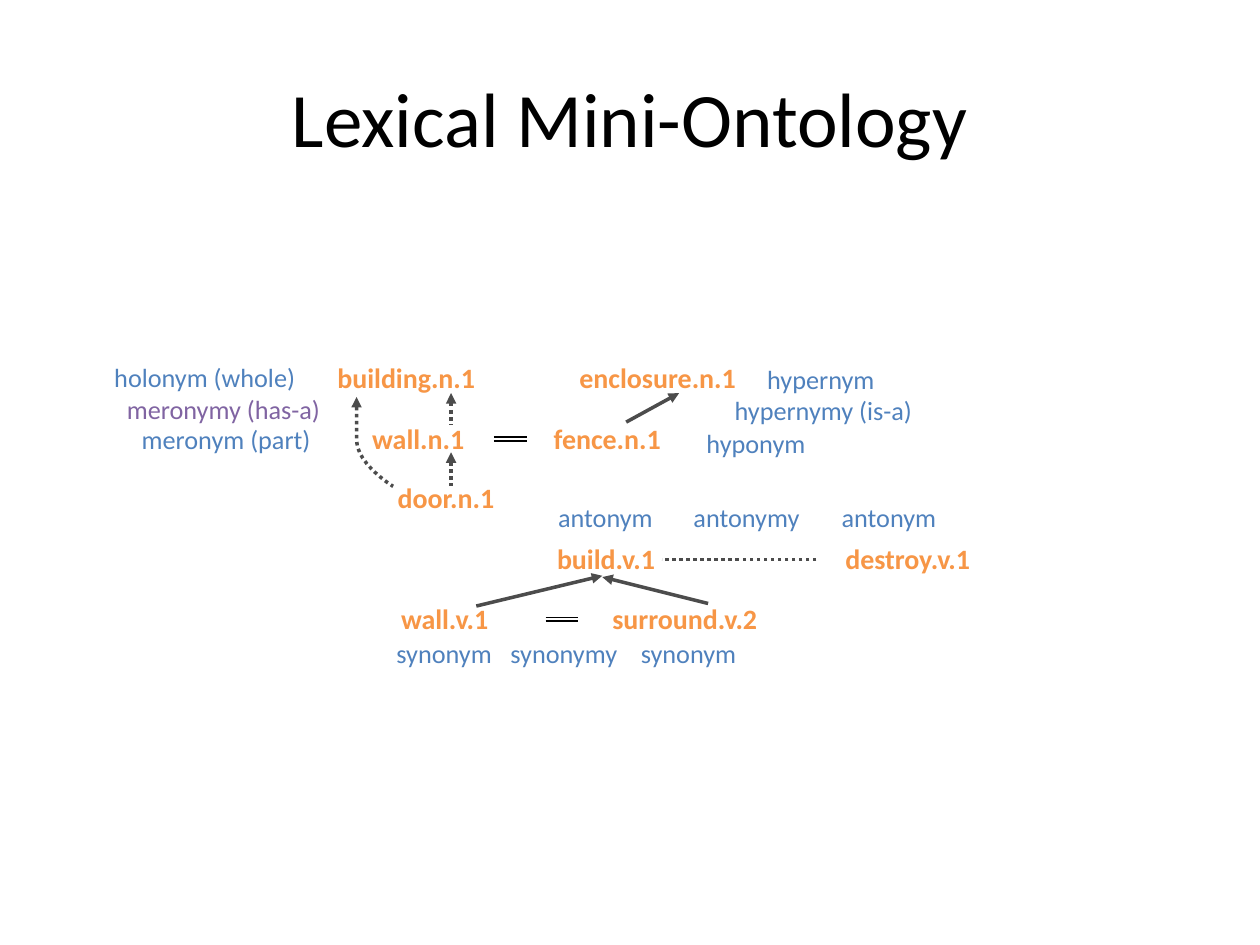
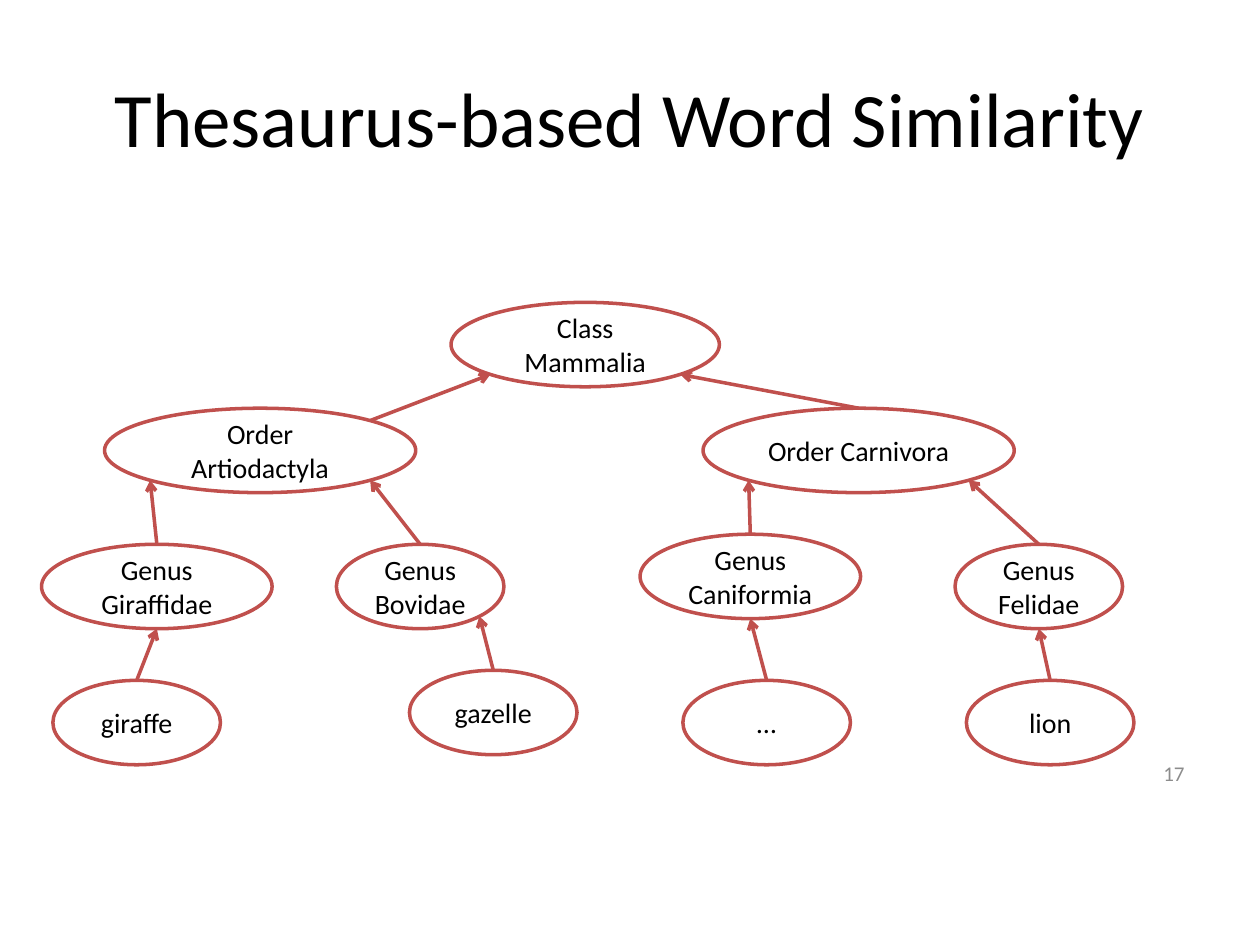
from typing import NamedTuple

from lxml.etree import SubElement
from pptx import Presentation
from pptx.dml.color import RGBColor
from pptx.enum.dml import MSO_LINE_DASH_STYLE as Dash
from pptx.enum.shapes import MSO_CONNECTOR as Conn, MSO_SHAPE as Shp
from pptx.enum.text import MSO_ANCHOR as Anchor, PP_ALIGN as Align
from pptx.oxml.ns import qn
from pptx.util import Inches, Pt

FONT = "Calibri"
BLACK, WHITE, GREY = "000000", "FFFFFF", "8C8C8C"
ORANGE, BLUE, PURPLE = "F79646", "4F81BD", "8064A2"
ARROW_GREY, RED = "4C4C4C", "C0504D"

Point = tuple[float, float]


class Label(NamedTuple):
    text: str
    left: float
    top: float
    width: float
    height: float = 0.25
    color: str = BLUE


class Relation(NamedTuple):
    """A line whose arrowhead, if any, sits at the head point."""
    head: Point
    tail: Point
    arrow: str | None = "triangle"
    dotted: bool = False


class Node(NamedTuple):
    text: str
    left: float
    top: float
    width: float = 1.33


class Link(NamedTuple):
    child: str
    parent: str
    parent_site: int
    child_site: int = 0


# Connection sites of an ellipse, as offsets in half widths and half heights
DIAG = 0.707
SITES = [(0, -1), (-DIAG, -DIAG), (-1, 0), (-DIAG, DIAG),
         (0, 1), (DIAG, DIAG), (1, 0), (DIAG, -DIAG)]
BOTTOM_LEFT, BOTTOM, BOTTOM_RIGHT, TOP_RIGHT = 3, 4, 5, 7

TERM_H, TALL_H = 0.27, 0.36
TERMS = [
    Label("building.n.1", 2.67, 2.86, 1.11, TERM_H),
    Label("enclosure.n.1", 4.59, 2.86, 1.26, TERM_H),
    Label("wall.n.1", 2.95, 3.34, 0.74, TERM_H),
    Label("fence.n.1", 4.39, 3.34, 0.86, TERM_H),
    Label("door.n.1", 2.82, 3.77, 1.44, TALL_H),
    Label("build.v.1", 4.09, 4.25, 1.44, TALL_H),
    Label("destroy.v.1", 6.35, 4.25, 1.71, TALL_H),
    Label("wall.v.1", 3.18, 4.77, 0.70, TERM_H),
    Label("surround.v.2", 4.39, 4.73, 2.09, TALL_H),
]
ANTONYM_Y, SYNONYM_Y = 3.98, 5.06
ROLES = [
    Label("holonym (whole)", 0.90, 2.87, 1.45),
    Label("meronymy (has-a)", 0.36, 3.06, 2.83, 0.37, PURPLE),
    Label("meronym (part)", 0.94, 3.30, 1.71, 0.37),
    Label("hypernym", 6.08, 2.88, 0.87),
    Label("hypernymy (is-a)", 5.82, 3.13, 1.43),
    Label("hyponym", 5.60, 3.39, 0.80),
    Label("antonym", 4.42, ANTONYM_Y, 0.77),
    Label("antonymy", 5.49, ANTONYM_Y, 0.87),
    Label("antonym", 6.67, ANTONYM_Y, 0.77),
    Label("synonym", 3.14, SYNONYM_Y, 0.77),
    Label("synonymy", 4.04, SYNONYM_Y, 0.87),
    Label("synonym", 5.08, SYNONYM_Y, 0.77),
]
RELATIONS = [
    Relation((3.58, 3.12), (3.58, 3.37), dotted=True),
    Relation((3.58, 3.59), (3.58, 3.86), dotted=True),
    Relation((5.39, 3.12), (4.97, 3.35)),
    Relation((4.78, 4.57), (3.78, 4.81)),
    Relation((4.78, 4.58), (5.62, 4.79)),
    Relation((6.48, 4.44), (5.25, 4.44), arrow=None, dotted=True),
]
DOOR_TO_BUILDING = [
    [(2.83, 3.15), (2.83, 3.15), (2.83, 3.43), (2.83, 3.50)],
    [(2.83, 3.50), (2.84, 3.69), (3.12, 3.86), (3.12, 3.86)],
]
EQUAL_SIGNS = [(3.92, 3.47), (4.33, 4.90)]
EQUAL_W, EQUAL_GAP = 0.26, 0.03

NODE_H = 0.67
ORDER_Y, GENUS_Y, ANIMAL_Y = 3.24, 4.32, 5.40
NODES = [
    Node("Class Mammalia", 3.58, 2.40, 2.13),
    Node("Order Artiodactyla", 0.83, ORDER_Y, 2.47),
    Node("Order Carnivora", 5.58, ORDER_Y, 2.47),
    Node("Genus Giraffidae", 0.33, GENUS_Y, 1.83),
    Node("Genus Bovidae", 2.67, GENUS_Y),
    Node("Genus Caniformia", 5.08, 4.24, 1.75),
    Node("Genus Felidae", 7.58, GENUS_Y),
    Node("giraffe", 0.42, ANIMAL_Y),
    Node("gazelle", 3.25, 5.32),
    Node("…", 5.42, ANIMAL_Y),
    Node("lion", 7.67, ANIMAL_Y),
]
LINKS = [
    Link("Order Artiodactyla", "Class Mammalia", BOTTOM_LEFT, TOP_RIGHT),
    Link("Order Carnivora", "Class Mammalia", BOTTOM_RIGHT),
    Link("Genus Giraffidae", "Order Artiodactyla", BOTTOM_LEFT),
    Link("Genus Bovidae", "Order Artiodactyla", BOTTOM_RIGHT),
    Link("Genus Caniformia", "Order Carnivora", BOTTOM_LEFT),
    Link("Genus Felidae", "Order Carnivora", BOTTOM_RIGHT),
    Link("giraffe", "Genus Giraffidae", BOTTOM),
    Link("gazelle", "Genus Bovidae", BOTTOM_RIGHT),
    Link("…", "Genus Caniformia", BOTTOM),
    Link("lion", "Genus Felidae", BOTTOM),
]


def rgb(color: str) -> RGBColor:
    return RGBColor.from_string(color)


def write(tf, text: str, *, size: float, color: str = BLACK, bold: bool = False,
          align=Align.CENTER, wrap: bool = True, inset: float | None = None) -> None:
    tf.word_wrap = wrap
    tf.vertical_anchor = Anchor.MIDDLE
    if inset is not None:
        tf.margin_left = tf.margin_right = Inches(inset)
        tf.margin_top = tf.margin_bottom = Inches(inset)
    p = tf.paragraphs[0]
    p.alignment = align
    r = p.add_run()
    r.text = text
    r.font.name, r.font.size, r.font.bold = FONT, Pt(size), bold
    r.font.color.rgb = rgb(color)


def add_text(s, box: Label, **fmt):
    sp = s.shapes.add_textbox(Inches(box.left), Inches(box.top),
                              Inches(box.width), Inches(box.height))
    write(sp.text_frame, box.text, **fmt)


def style_line(sp, color: str, width: float, dotted: bool = False,
               head: str | None = None, tail: str | None = None) -> None:
    sp.line.color.rgb = rgb(color)
    sp.line.width = Pt(width)
    if dotted:
        sp.line.dash_style = Dash.ROUND_DOT
    ln = sp._element.spPr.find(qn("a:ln"))
    for tag, kind in (("a:headEnd", head), ("a:tailEnd", tail)):
        if kind:
            SubElement(ln, qn(tag)).set("type", kind)


def add_line(s, start: Point, end: Point, color: str, width: float, **style):
    c = s.shapes.add_connector(Conn.STRAIGHT, *map(Inches, (*start, *end)))
    style_line(c, color, width, **style)
    SubElement(c._element.spPr, qn("a:effectLst"))
    return c


def bezier(curve: list[Point], steps: int = 12) -> list[Point]:
    """Points along a cubic curve, after its first point."""
    points = []
    for i in range(1, steps + 1):
        t = i / steps
        u = 1 - t
        weights = (u**3, 3 * u * u * t, 3 * u * t * t, t**3)
        points.append(tuple(sum(w * pt[axis] for w, pt in zip(weights, curve))
                            for axis in (0, 1)))
    return points


def add_curve(s, curves: list[list[Point]], **style) -> None:
    fb = s.shapes.build_freeform(*map(Inches, curves[0][0]))
    points = [pt for curve in curves for pt in bezier(curve)]
    fb.add_line_segments([(Inches(x), Inches(y)) for x, y in points], close=False)
    sp = fb.convert_to_shape()
    sp.shadow.inherit = False
    sp.fill.background()
    style_line(sp, ARROW_GREY, 2, **style)


def add_node(s, node: Node):
    sp = s.shapes.add_shape(Shp.OVAL, Inches(node.left), Inches(node.top),
                            Inches(node.width), Inches(NODE_H))
    sp.shadow.inherit = False
    sp.fill.solid()
    sp.fill.fore_color.rgb = rgb(WHITE)
    style_line(sp, RED, 2)
    write(sp.text_frame, node.text, size=16)
    return sp


def site_point(node: Node, site: int) -> Point:
    dx, dy = SITES[site]
    return (node.left + node.width / 2 * (1 + dx), node.top + NODE_H / 2 * (1 + dy))


def glue(c, tag: str, sp, site: int) -> None:
    """Join a connector end to any of an ellipse's eight sites."""
    props = c._element.find(".//" + qn("p:cNvCxnSpPr"))
    cxn = SubElement(props, qn(tag))
    cxn.set("id", str(sp.shape_id))
    cxn.set("idx", str(site))


def add_titled_slide(prs, title: str):
    s = prs.slides.add_slide(prs.slide_layouts[5])
    sp = s.shapes.title
    sp.left, sp.top, sp.width, sp.height = map(Inches, (0.5, 0.3, 9, 1.25))
    write(sp.text_frame, title, size=44)
    return s


def build_ontology(prs) -> None:
    s = add_titled_slide(prs, "Lexical Mini-Ontology")
    add_curve(s, DOOR_TO_BUILDING, dotted=True, head="triangle")
    for term in TERMS:
        add_text(s, term, size=16, color=ORANGE, bold=True, wrap=False, inset=0)
    for rel in RELATIONS:
        add_line(s, rel.head, rel.tail, ARROW_GREY, 2, dotted=rel.dotted, head=rel.arrow)
    for x, top in EQUAL_SIGNS:
        for y in (top, top + EQUAL_GAP):
            add_line(s, (x, y), (x + EQUAL_W, y), BLACK, 1)
    for role in ROLES:
        add_text(s, role, size=15, color=role.color, wrap=False, inset=0)


def build_taxonomy(prs) -> None:
    s = add_titled_slide(prs, "Thesaurus-based Word Similarity")
    add_text(s, Label("17", 7.17, 5.94, 2.33, 0.4), size=12, color=GREY, align=Align.RIGHT)
    nodes = {node.text: node for node in NODES}
    ovals = {node.text: add_node(s, node) for node in NODES}
    for link in LINKS:
        c = add_line(s, site_point(nodes[link.child], link.child_site),
                     site_point(nodes[link.parent], link.parent_site),
                     RED, 2, tail="arrow")
        glue(c, "a:stCxn", ovals[link.child], link.child_site)
        glue(c, "a:endCxn", ovals[link.parent], link.parent_site)


def main() -> None:
    prs = Presentation()
    prs.slide_width, prs.slide_height = Inches(10), Inches(7.5)
    build_ontology(prs)
    build_taxonomy(prs)
    prs.save("out.pptx")


if __name__ == "__main__":
    main()
